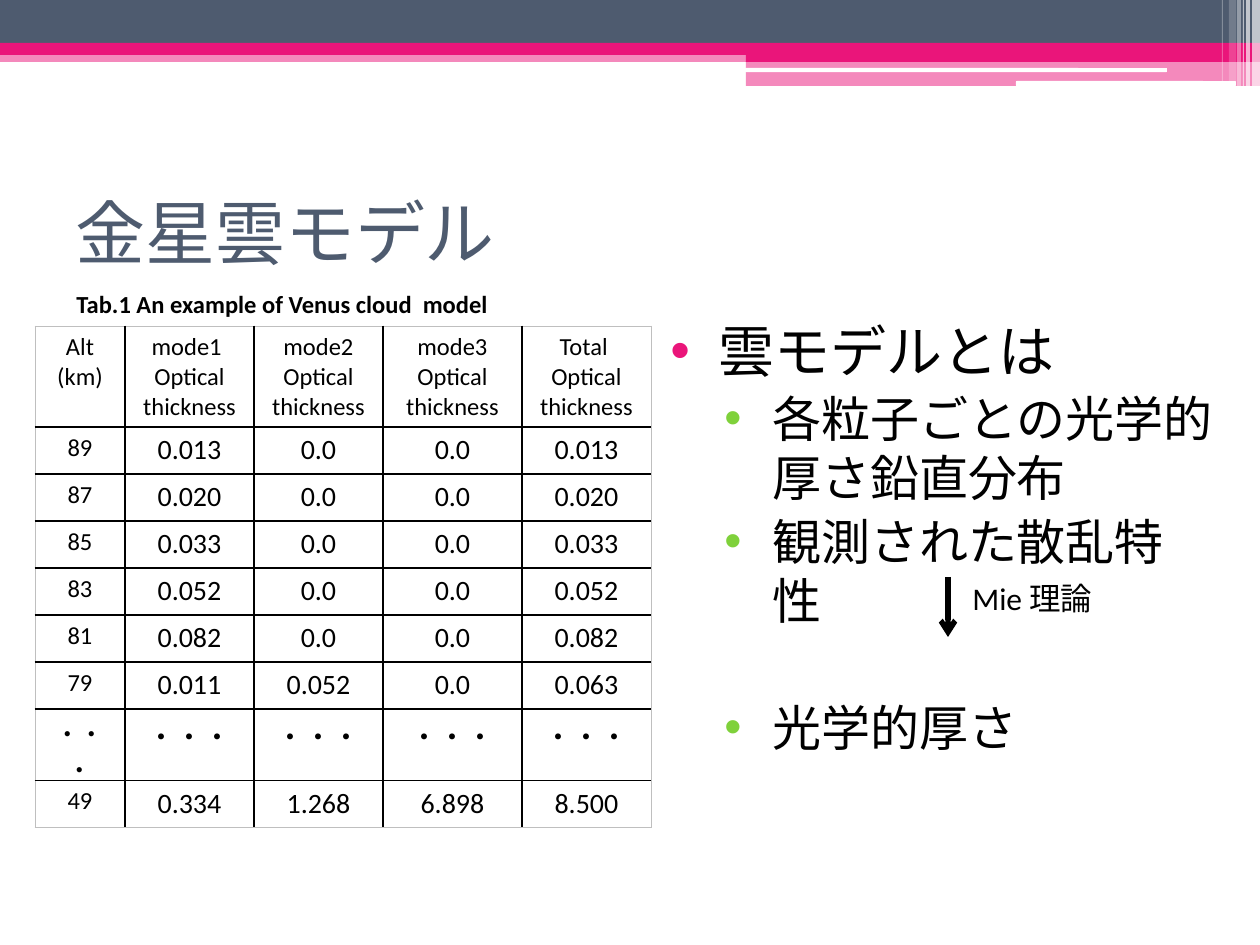
from dataclasses import dataclass

from pptx import Presentation
from pptx import util as u
from pptx.dml.color import RGBColor
from pptx.enum import lang, shapes, text
from pptx.oxml.ns import qn
from lxml import etree


@dataclass(frozen=True)
class Theme:
    font: str = "Calibri"
    slate: str = "4E5B6F"
    pink: str = "EA157A"
    green: str = "7FD13B"
    white: str = "FFFFFF"
    black: str = "000000"
    edge: str = "BFBFBF"
    title: int = 40
    lead: int = 32
    point: int = 28
    note: int = 18
    value: int = 16
    small: int = 14


THEME = Theme()
SCALE = 914400 / 126
HEADS = ["mode1 ", "mode2", "mode3", "Total "]
ROWS = [
    ["89", "0.013", "0.0", "0.0", "0.013"],
    ["87", "0.020", "0.0", "0.0", "0.020"],
    ["85", "0.033", "0.0", "0.0", "0.033"],
    ["83", "0.052", "0.0", "0.0", "0.052"],
    ["81", "0.082", "0.0", "0.0", "0.082"],
    ["79", "0.011", "0.052", "0.0", "0.063"],
    ["・・・"] * 5,
    ["49", "0.334", "1.268", "6.898", "8.500"],
]


def px(value):
    return u.Emu(round(value * SCALE))


def apply(target, values):
    for name, value in values.items():
        setattr(target, name, value)


def add_node(parent, tag, **attributes):
    return etree.SubElement(parent, qn(tag), attributes)


def write(para, words, size, color=THEME.black, bold=False):
    span = para.add_run()
    span.text = words
    apply(span.font, {"name": THEME.font, "size": u.Pt(size), "bold": bold})
    span.font.color.rgb = RGBColor.from_string(color)
    if not words.isascii():
        span.font.language_id = lang.MSO_LANGUAGE_ID.JAPANESE


def add_text(page, area, wrap=True, anchor=text.MSO_ANCHOR.TOP):
    frame = page.shapes.add_textbox(*map(px, area)).text_frame
    apply(frame, {"word_wrap": wrap, "vertical_anchor": anchor})
    return frame


def add_bar(page, area, color, opacity=100, kind=shapes.MSO_SHAPE.RECTANGLE):
    bar = page.shapes.add_shape(kind, *map(px, area))
    bar.shadow.inherit = False
    bar.fill.solid()
    bar.fill.fore_color.rgb = RGBColor.from_string(color)
    bar.line.fill.background()
    if opacity < 100:
        tint = bar._element.spPr.find(".//" + qn("a:srgbClr"))
        add_node(tint, "a:alpha", val=str(opacity * 1000))


def add_banner(page, left, top, width):
    tab = 746
    rest = width - tab
    bands = [
        (0, 50, width, 12, THEME.pink, 50),
        (0, 0, width, 43, THEME.slate, 100),
        (0, 43, width, 12, THEME.pink, 100),
        (tab, 49, rest, 13, THEME.pink, 100),
        (tab, 61, rest, 25, THEME.pink, 50),
    ]
    for x, y, wide, high, color, opacity in bands:
        add_bar(page, (left + x, top + y, wide, high), color, opacity)
    for x, y, wide, high in [(745, 68, 422, 4), (1016, 81, 220, 5)]:
        add_bar(page, (left + x, top + y, wide, high), THEME.white,
                kind=shapes.MSO_SHAPE.ROUNDED_RECTANGLE)
    stripes = [(1252, 8, 86, 65), (1246, 4, 86, 65), (1243, 1, 86, 60),
               (1237, 4, 86, 40), (1229, 7, 81, 20), (1222, 1, 81, 30)]
    for x, wide, high, opacity in stripes:
        add_bar(page, (left + x, top, wide, high), THEME.white, opacity)


def add_title(page, left, top, width, height):
    frame = add_text(page, (left, top, width, height), anchor=text.MSO_ANCHOR.MIDDLE)
    write(frame.paragraphs[0], "金星雲モデル", THEME.title, THEME.slate)


def add_borders(cell, outer):
    props = cell._tc.get_or_add_tcPr()
    for index, (side, is_outer) in enumerate(outer.items()):
        width, color = (6350, THEME.edge) if is_outer else (12700, THEME.black)
        line = etree.Element(qn("a:" + side), {"w": str(width)})
        add_node(add_node(line, "a:solidFill"), "a:srgbClr", val=color)
        props.insert(index, line)


def add_cloud_table(page, left, top):
    widths = [90, 129, 129, 139, 129]
    heights = [94] + [47] * len(ROWS)
    caption = add_text(page, (left + 29, top - 43, 486, 43), wrap=False)
    write(caption.paragraphs[0], "Tab.1 An example of Venus cloud  model", THEME.small, bold=True)
    table = page.shapes.add_table(
        len(heights), len(widths), px(left), px(top), px(sum(widths)), px(sum(heights))).table
    apply(table, {"first_row": False, "horz_banding": False})
    for column, width in zip(table.columns, widths):
        column.width = px(width)
    for row, height in zip(table.rows, heights):
        row.height = px(height)
    header = [["Alt", "(km)"]] + [[head, "Optical thickness"] for head in HEADS]
    body = [[[value] for value in row] for row in ROWS]
    for r, row in enumerate([header] + body):
        for c, lines in enumerate(row):
            cell = table.cell(r, c)
            cell.fill.solid()
            cell.fill.fore_color.rgb = RGBColor.from_string(THEME.white)
            add_borders(cell, {"lnL": c == 0, "lnR": c == len(widths) - 1,
                               "lnT": r == 0, "lnB": r == len(ROWS)})
            size = THEME.small if r == 0 or c == 0 else THEME.value
            for index, words in enumerate(lines):
                frame = cell.text_frame
                para = frame.add_paragraph() if index else frame.paragraphs[0]
                para.alignment = text.PP_ALIGN.CENTER
                write(para, words, size)


def add_points(page, left, top, width, height):
    frame = add_text(page, (left, top, width, height))
    points = [
        ("雲モデルとは", 0, 3),
        ("各粒子ごとの光学的厚さ鉛直分布", 1, 3),
        ("観測された散乱特性", 1, 3),
        ("光学的厚さ", 1, 39),
    ]
    looks = [(48, THEME.lead, THEME.pink), (102, THEME.point, THEME.green)]
    for index, (words, level, gap) in enumerate(points):
        margin, size, color = looks[level]
        para = frame.add_paragraph() if index else frame.paragraphs[0]
        apply(para, {"level": level, "space_before": u.Pt(gap)})
        props = para._p.get_or_add_pPr()
        props.set("marL", str(px(margin)))
        props.set("indent", str(px(-48)))
        add_node(add_node(props, "a:buClr"), "a:srgbClr", val=color)
        add_node(props, "a:buFont", typeface="Arial")
        add_node(props, "a:buChar", char="•")
        write(para, words, size)


def add_theory_arrow(page, left, top, height):
    arrow = page.shapes.add_connector(
        shapes.MSO_CONNECTOR.STRAIGHT, px(left), px(top), px(left), px(top + height))
    arrow.line.width = u.Pt(3)
    arrow.line.color.rgb = RGBColor.from_string(THEME.black)
    add_node(arrow.line._get_or_add_ln(), "a:tailEnd", type="arrow")
    add_node(arrow._element.spPr, "a:effectLst")
    label = add_text(page, (left + 12, top - 4, 146, 50))
    write(label.paragraphs[0], "Mie 理論", THEME.note)


def main():
    deck = Presentation()
    apply(deck, {"slide_width": px(1260), "slide_height": px(945)})
    page = deck.slides.add_slide(deck.slide_layouts[6])
    add_banner(page, 0, 0, 1260)
    add_title(page, 63, 158, 1134, 147)
    add_points(page, 658, 310, 567, 549)
    add_cloud_table(page, 35, 326)
    add_theory_arrow(page, 948, 577, 60)
    deck.save("out.pptx")


if __name__ == "__main__":
    main()
